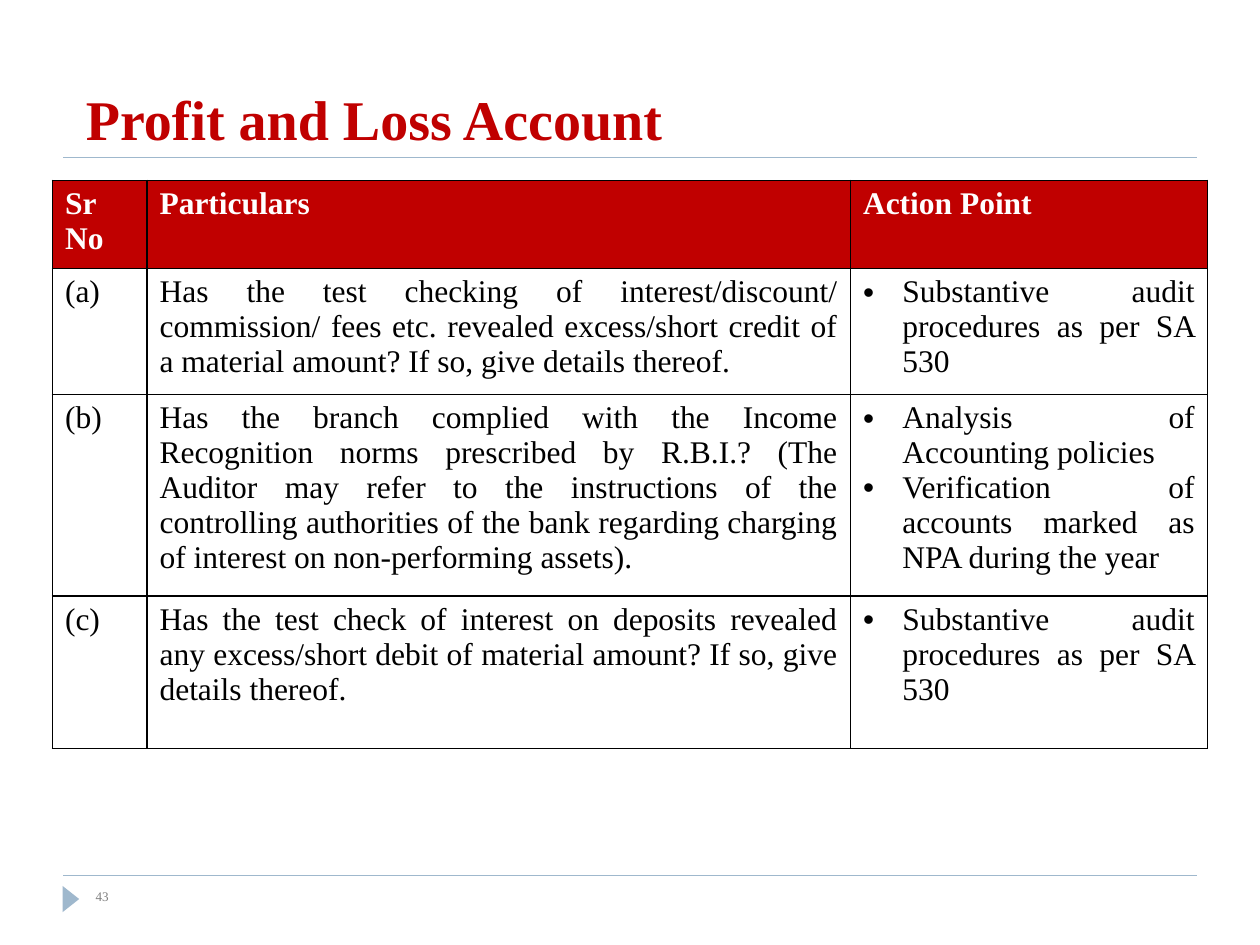
from dataclasses import dataclass
from typing import Any

from lxml import etree
from pptx import Presentation
from pptx import util as u
from pptx.dml.color import RGBColor
from pptx.enum import shapes, text
from pptx.oxml.ns import qn


@dataclass(frozen=True)
class Theme:
    """Colours, type sizes and font of the slide."""

    font: str = "Times New Roman"
    red: str = "C00000"
    rule: str = "9FB8CD"
    grey: str = "808080"
    white: str = "FFFFFF"
    black: str = "000000"
    title_size: float = 32
    table_size: float = 18
    number_size: float = 7.5


@dataclass(frozen=True)
class AuditRow:
    """One question with its actions and row height."""

    label: str
    question: str
    actions: tuple[str, ...]
    height: float


THEME = Theme()
HEADINGS = ("Sr No", "Particulars", "Action Point")
HEADER_HEIGHT = 47
COLUMN_WIDTHS = (54, 402, 204)
AUDIT_ROWS = (
    AuditRow(
        "(a)",
        "Has the test checking of interest/discount/ commission/ fees etc. revealed "
        "excess/short credit of a material amount? If so, give details thereof.",
        ("Substantive audit procedures as per SA 530",),
        67,
    ),
    AuditRow(
        "(b)",
        "Has the branch complied with the Income Recognition norms prescribed by R.B.I.? "
        "(The Auditor may refer to the instructions of the controlling authorities of the "
        "bank regarding charging of interest on non-performing assets).",
        ("Analysis of Accounting policies",
         "Verification of accounts marked as NPA during the year"),
        107,
    ),
    AuditRow(
        "(c)",
        "Has the test check of interest on deposits revealed any excess/short debit of "
        "material amount? If so, give details thereof.",
        ("Substantive audit procedures as per SA 530",),
        87,
    ),
)


def write(frame: Any, *lines: str, size: float, color: str, bold: bool = False,
          align: Any = text.PP_ALIGN.LEFT, bullet: bool = False) -> None:
    """Fill a text frame with one formatted paragraph per line."""
    frame.word_wrap = True
    for index, line in enumerate(lines):
        paragraph = frame.paragraphs[0] if index == 0 else frame.add_paragraph()
        paragraph.alignment = align
        if bullet:
            properties = paragraph._p.get_or_add_pPr()
            properties.set("marL", str(u.Pt(22.5)))
            properties.set("indent", str(-u.Pt(22.5)))
            etree.SubElement(properties, qn("a:buFont"), typeface="Arial")
            etree.SubElement(properties, qn("a:buChar"), char="•")
        run = paragraph.add_run()
        run.text = line
        run.font.name = THEME.font
        run.font.size = u.Pt(size)
        run.font.bold = bold
        run.font.color.rgb = RGBColor.from_string(color)


def add_text(slide: Any, content: str, left: float, top: float, width: float,
             height: float, anchor: Any = text.MSO_ANCHOR.TOP, **style: Any) -> None:
    """Add a text box measured in points."""
    box = slide.shapes.add_textbox(u.Pt(left), u.Pt(top), u.Pt(width), u.Pt(height))
    box.text_frame.vertical_anchor = anchor
    write(box.text_frame, content, **style)


def add_rule(slide: Any, top: float) -> None:
    """Draw a horizontal rule across the slide."""
    rule = slide.shapes.add_connector(
        shapes.MSO_CONNECTOR.STRAIGHT, u.Pt(36), u.Pt(top), u.Pt(684), u.Pt(top))
    rule.line.color.rgb = RGBColor.from_string(THEME.rule)
    rule.line.width = u.Pt(0.75)
    etree.SubElement(rule._element.spPr, qn("a:effectLst"))


def add_marker(slide: Any) -> None:
    """Draw the triangle beside the page number."""
    marker = slide.shapes.add_shape(
        shapes.MSO_SHAPE.ISOSCELES_TRIANGLE, u.Pt(33), u.Pt(509), u.Pt(15), u.Pt(9.5))
    marker.rotation = 90
    marker.shadow.inherit = False
    marker.fill.solid()
    marker.fill.fore_color.rgb = RGBColor.from_string(THEME.rule)
    marker.line.fill.background()


def add_borders(cell: Any) -> None:
    """Give a cell a thin border on every side."""
    properties = cell._tc.get_or_add_tcPr()
    for index, side in enumerate(("lnL", "lnR", "lnT", "lnB")):
        line = etree.Element(qn(f"a:{side}"), w=str(u.Pt(1)))
        fill = etree.SubElement(line, qn("a:solidFill"))
        etree.SubElement(fill, qn("a:srgbClr"), val=THEME.black)
        properties.insert(index, line)


def fill_cell(cell: Any, *lines: str, header: bool = False, bullet: bool = False) -> None:
    """Write and format one table cell."""
    if header:
        cell.fill.solid()
        cell.fill.fore_color.rgb = RGBColor.from_string(THEME.red)
    else:
        cell.fill.background()
    add_borders(cell)
    write(cell.text_frame, *lines, size=THEME.table_size, bold=header, bullet=bullet,
          color=THEME.white if header else THEME.black, align=text.PP_ALIGN.JUSTIFY)


def add_audit_table(slide: Any) -> None:
    """Add the table of questions and action points."""
    heights = (HEADER_HEIGHT, *(row.height for row in AUDIT_ROWS))
    table = slide.shapes.add_table(
        len(heights), len(COLUMN_WIDTHS), u.Pt(30), u.Pt(103),
        u.Pt(sum(COLUMN_WIDTHS)), u.Pt(sum(heights))).table
    table.first_row = False
    table.horz_banding = False
    for column, width in zip(table.columns, COLUMN_WIDTHS):
        column.width = u.Pt(width)
    for table_row, height in zip(table.rows, heights):
        table_row.height = u.Pt(height)
    for index, heading in enumerate(HEADINGS):
        fill_cell(table.cell(0, index), heading, header=True)
    for index, row in enumerate(AUDIT_ROWS, start=1):
        fill_cell(table.cell(index, 0), row.label)
        fill_cell(table.cell(index, 1), row.question)
        fill_cell(table.cell(index, 2), *row.actions, bullet=True)


def main() -> None:
    """Build and save the slide."""
    presentation = Presentation()
    presentation.slide_width = u.Pt(720)
    presentation.slide_height = u.Pt(540)
    slide = presentation.slides.add_slide(presentation.slide_layouts[6])
    for top in (500.4, 90):
        add_rule(slide, top)
    add_marker(slide)
    add_text(slide, "Profit and Loss Account", 42, 12, 648, 78, text.MSO_ANCHOR.BOTTOM,
             size=THEME.title_size, color=THEME.red, bold=True)
    add_text(slide, "43", 47.5, 504, 312, 21.6, size=THEME.number_size, color=THEME.grey)
    add_audit_table(slide)
    presentation.save("out.pptx")


if __name__ == "__main__":
    main()
